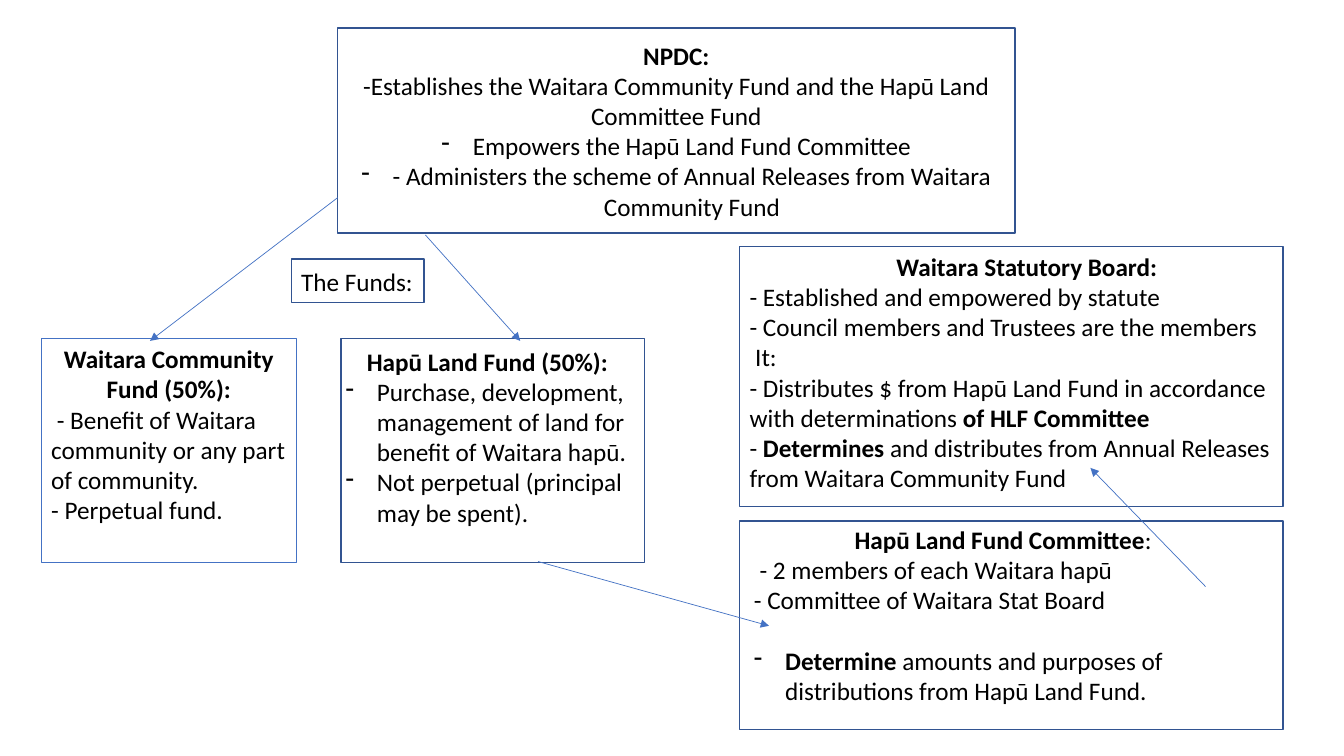
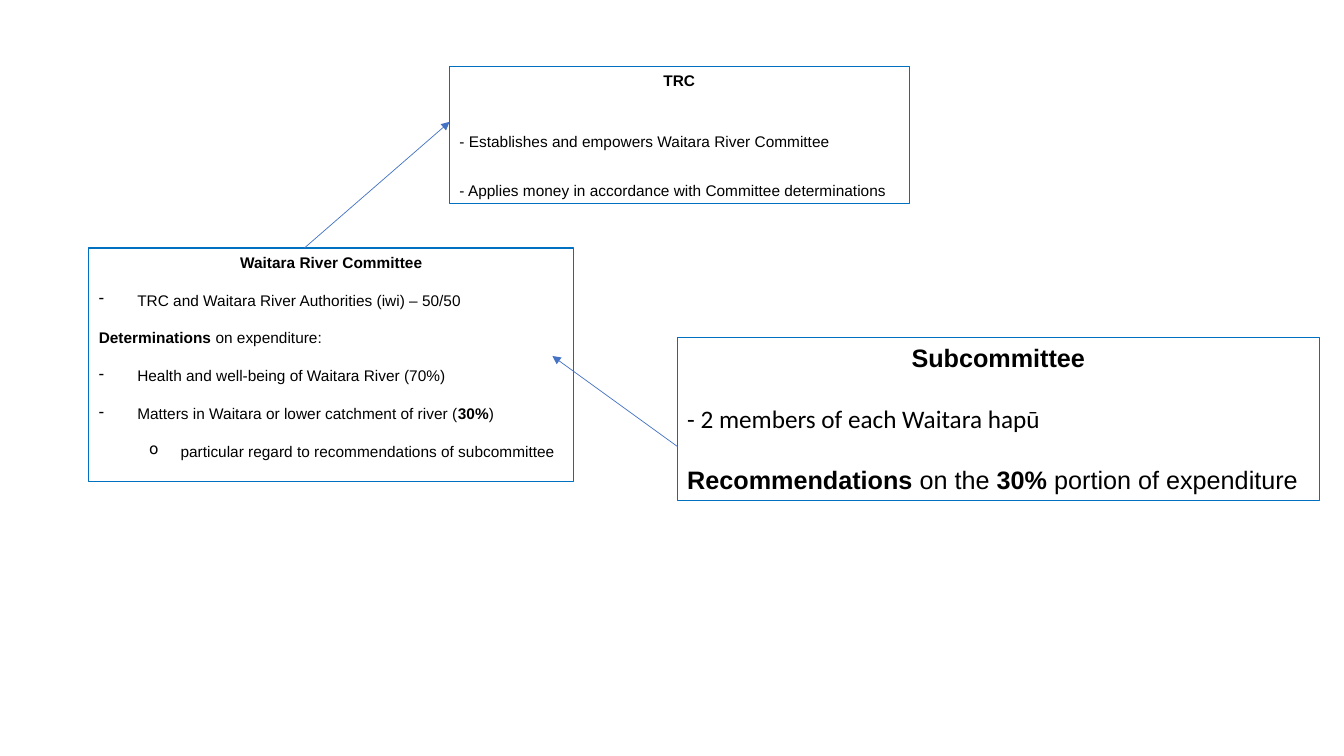
from lxml import etree
from pptx import Presentation
from pptx.dml.color import RGBColor
from pptx.enum.shapes import MSO_CONNECTOR, MSO_SHAPE
from pptx.enum.text import MSO_ANCHOR, PP_ALIGN
from pptx.oxml.ns import qn
from pptx.util import Cm, Pt

RECT = MSO_SHAPE.RECTANGLE
STRAIGHT = MSO_CONNECTOR.STRAIGHT
TOP, MIDDLE = MSO_ANCHOR.TOP, MSO_ANCHOR.MIDDLE
LEFT, CENTER = PP_ALIGN.LEFT, PP_ALIGN.CENTER

BLACK, WHITE = "000000", "FFFFFF"
NAVY, BLUE, BRIGHT = "325491", "4472C4", "0070C0"


def rgb(value):
    return RGBColor.from_string(value)


def add_bullet(p, char, margin, hang):
    pPr = p._p.get_or_add_pPr()
    pPr.set("marL", str(Cm(margin)))
    pPr.set("indent", str(-Cm(hang)))
    etree.SubElement(pPr, qn("a:buChar"), char=char)


def add_text(tf, text, size=18, font="Calibri", align=LEFT, before=0,
             bullet=None, margin=0.79, hang=0.79):
    """Write one paragraph; **double asterisks** enclose bold words."""
    first = tf.paragraphs[0]
    p = tf.add_paragraph() if first.runs else first
    p.alignment = align
    p.space_before = Pt(before)
    if bullet:
        add_bullet(p, bullet, margin, hang)
    for i, part in enumerate(text.split("**")):
        if part:
            r = p.add_run()
            r.text = part
            r.font.size = Pt(size)
            r.font.name = font
            r.font.bold = i % 2 == 1
            r.font.color.rgb = rgb(BLACK)


def add_paragraphs(tf, paragraphs, anchor=TOP, **style):
    """Write (text, format) pairs that share a style."""
    tf.word_wrap = True
    tf.vertical_anchor = anchor
    for text, fmt in paragraphs:
        add_text(tf, text, **{**style, **fmt})


def add_frame(s, at, color, width=1.0, fill=None):
    sp = s.shapes.add_shape(RECT, *map(Cm, at))
    sp.shadow.inherit = False
    if fill:
        sp.fill.solid()
        sp.fill.fore_color.rgb = rgb(fill)
    else:
        sp.fill.background()
    sp.line.color.rgb = rgb(color)
    sp.line.width = Pt(width)
    return sp


def add_label(s, at, paragraphs):
    add_paragraphs(s.shapes.add_textbox(*map(Cm, at)).text_frame, paragraphs)


def add_arrow(s, x1, y1, x2, y2):
    line = s.shapes.add_connector(STRAIGHT, Cm(x1), Cm(y1), Cm(x2), Cm(y2))
    line.line.color.rgb = rgb(BLUE)
    line.line.width = Pt(0.5)
    etree.SubElement(line.line._get_or_add_ln(), qn("a:tailEnd"), type="triangle")
    etree.SubElement(line._element.spPr, qn("a:effectLst"))


TITLE = {"align": CENTER}
PLAIN = {}
DASH = {"bullet": "-"}


def build_funds(s):
    npdc = add_frame(s, (8.51, 0.71, 17.07, 5.16), NAVY)
    add_paragraphs(npdc.text_frame, [
        ("**NPDC:**", PLAIN),
        ("-Establishes the Waitara Community Fund and the Hapū Land Committee Fund", PLAIN),
        ("Empowers the Hapū Land Fund Committee", DASH),
        ("- Administers the scheme of Annual Releases from Waitara Community Fund", DASH),
    ], anchor=MIDDLE, align=CENTER)

    add_frame(s, (7.34, 6.53, 3.35, 1.09), NAVY)
    add_label(s, (7.34, 6.58, 3.35, 1.02), [("The Funds:", PLAIN)])

    community = add_frame(s, (1.04, 8.53, 6.43, 5.64), BLUE, 0.75)
    add_paragraphs(community.text_frame, [
        ("**Waitara Community Fund (50%):**", TITLE),
        (" - Benefit of Waitara community or any part of community.", PLAIN),
        ("- Perpetual fund.", PLAIN),
    ])

    add_frame(s, (8.59, 8.53, 7.65, 5.64), NAVY)
    add_label(s, (8.46, 8.59, 7.65, 5.64), [
        ("**Hapū Land Fund (50%):**", TITLE),
        ("Purchase, development, management of land for benefit of Waitara hapū.", DASH),
        ("Not perpetual (principal may be spent).", DASH),
    ])

    add_frame(s, (18.64, 6.22, 13.69, 6.55), NAVY)
    add_label(s, (18.64, 6.2, 14.48, 7.19), [
        ("**Waitara Statutory Board:**", TITLE),
        ("- Established and empowered by statute", PLAIN),
        ("- Council members and Trustees are the members", PLAIN),
        (" It:", PLAIN),
        ("- Distributes $ from Hapū Land Fund in accordance with determinations "
         "**of HLF Committee**", PLAIN),
        ("- **Determines** and distributes from Annual Releases from Waitara "
         "Community Fund", PLAIN),
    ])

    add_frame(s, (18.64, 13.13, 13.69, 5.26), NAVY)
    add_label(s, (18.75, 13.08, 13.06, 5.64), [
        ("**Hapū Land Fund Committee**:", TITLE),
        (" - 2 members of each Waitara hapū", PLAIN),
        ("- Committee of Waitara Stat Board", PLAIN),
        ("**Determine** amounts and purposes of distributions from Hapū Land Fund.",
         {"bullet": "-", "before": 22}),
    ])

    for ends in ((8.51, 4.98, 3.78, 8.59), (13.56, 14.15, 19.38, 15.77),
                 (30.38, 14.78, 27.48, 11.79), (10.72, 5.92, 13.11, 8.59)):
        add_arrow(s, *ends)


def build_river(s):
    small = {"size": 11, "font": "Arial"}
    title = {"align": CENTER, "before": 0}
    dash = {"bullet": "-", "margin": 0.97, "hang": 0.97}

    trc = add_frame(s, (11.33, 1.68, 11.58, 3.45), BRIGHT, 0.75, fill=WHITE)
    add_paragraphs(trc.text_frame, [
        ("**TRC**", title),
        ("- Establishes and empowers Waitara River Committee", {"before": 30}),
        ("- Applies money in accordance with Committee determinations", {"before": 21.6}),
    ], **small)

    committee = add_frame(s, (2.24, 6.25, 12.22, 5.89), BRIGHT, 0.75)
    add_paragraphs(committee.text_frame, [
        ("**Waitara River Committee**", title),
        ("TRC and Waitara River Authorities (iwi) – 50/50", dash),
        ("**Determinations** on expenditure:", PLAIN),
        ("Health and well-being of Waitara River (70%)", dash),
        ("Matters in Waitara or lower catchment of river (**30%**)", dash),
        ("particular regard to recommendations of subcommittee",
         {"bullet": "o", "margin": 2.06, "hang": 0.79}),
    ], before=13.8, **small)

    subcommittee = add_frame(s, (17.07, 8.51, 16.18, 4.11), BRIGHT, 0.75)
    add_paragraphs(subcommittee.text_frame, [
        ("**Subcommittee**", title),
        ("- 2 members of each Waitara hapū", {"font": "Calibri"}),
        ("**Recommendations** on the **30%** portion of expenditure", PLAIN),
    ], font="Arial", before=22)

    add_arrow(s, 17.07, 11.25, 13.92, 8.97)
    add_arrow(s, 7.67, 6.25, 11.33, 3.07)


def main():
    prs = Presentation()
    prs.slide_width, prs.slide_height = Cm(33.87), Cm(19.05)
    for build in (build_funds, build_river):
        build(prs.slides.add_slide(prs.slide_layouts[6]))
    prs.save("out.pptx")


if __name__ == "__main__":
    main()
